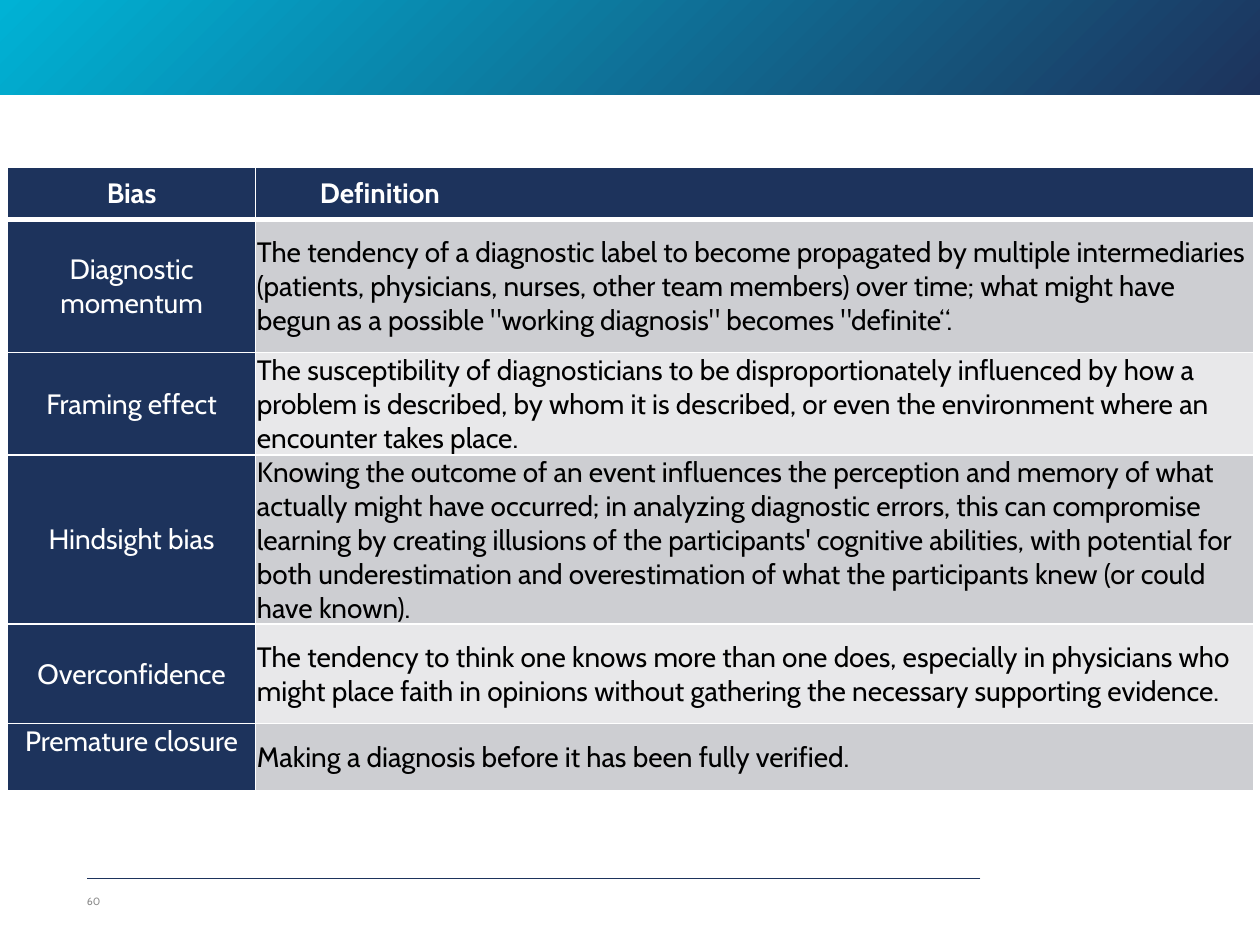
from lxml.etree import SubElement
from pptx import Presentation
from pptx.dml.color import RGBColor
from pptx.enum.shapes import MSO_CONNECTOR, MSO_SHAPE
from pptx.enum.text import MSO_ANCHOR, PP_ALIGN
from pptx.oxml import parse_xml
from pptx.oxml.ns import nsdecls, qn
from pptx.util import Inches, Pt

FONT = "Cabin"
COLORS = {
    "navy": "1D335C",
    "cyan": "00B2D5",
    "white": "FFFFFF",
    "black": "000000",
    "grey": "8C8C8C",
    "dark_band": "CDCED2",
    "light_band": "E8E8EA",
}
COLUMN_WIDTHS = [1.97, 7.92]
ROW_HEIGHTS = [0.41, 1.06, 0.79, 1.32, 0.79, 0.53]
HEADINGS = ("Bias", "Definition")
BIASES = [
    ("Diagnostic momentum",
     "The tendency of a diagnostic label to become propagated by multiple "
     "intermediaries (patients, physicians, nurses, other team members) over "
     "time; what might have begun as a possible \"working diagnosis\" becomes "
     "\"definite“."),
    ("Framing effect",
     "The susceptibility of diagnosticians to be disproportionately influenced "
     "by how a problem is described, by whom it is described, or even the "
     "environment where an encounter takes place."),
    ("Hindsight bias",
     "Knowing the outcome of an event influences the perception and memory of "
     "what actually might have occurred; in analyzing diagnostic errors, this "
     "can compromise learning by creating illusions of the participants' "
     "cognitive abilities, with potential for both underestimation and "
     "overestimation of what the participants knew (or could have known)."),
    ("Overconfidence",
     "The tendency to think one knows more than one does, especially in "
     "physicians who might place faith in opinions without gathering the "
     "necessary supporting evidence."),
    ("Premature closure",
     "Making a diagnosis before it has been fully verified."),
]


def rgb(name):
    return RGBColor.from_string(COLORS[name])


def style_font(font, size, color, bold=False):
    font.name = FONT
    font.size = Pt(size)
    font.bold = bold
    font.color.rgb = rgb(color)


def add_banner(slide):
    """Add the top band, shaded radially from its lower right corner."""
    banner = slide.shapes.add_shape(
        MSO_SHAPE.RECTANGLE, 0, 0, Inches(10), Inches(0.75))
    banner.shadow.inherit = False
    banner.line.fill.background()
    gradient = parse_xml(
        f'<a:gradFill {nsdecls("a")} rotWithShape="1"><a:gsLst>'
        f'<a:gs pos="0"><a:srgbClr val="{COLORS["navy"]}"/></a:gs>'
        f'<a:gs pos="100000"><a:srgbClr val="{COLORS["cyan"]}"/></a:gs>'
        '</a:gsLst><a:path path="circle">'
        '<a:fillToRect l="100000" t="100000"/></a:path></a:gradFill>')
    banner._element.spPr.find(qn("a:prstGeom")).addnext(gradient)


def add_footer_rule(slide):
    rule = slide.shapes.add_connector(
        MSO_CONNECTOR.STRAIGHT,
        Inches(7.78), Inches(6.97), Inches(0.69), Inches(6.97))
    rule.line.color.rgb = rgb("navy")
    rule.line.width = Pt(0.4)
    SubElement(rule._element.spPr, qn("a:effectLst"))


def add_page_number(slide, number):
    box = slide.shapes.add_textbox(
        Inches(0.69), Inches(6.95), Inches(0.38), Inches(0.4))
    frame = box.text_frame
    frame.word_wrap = True
    frame.vertical_anchor = MSO_ANCHOR.MIDDLE
    frame.margin_left = frame.margin_right = 0
    frame.margin_top = frame.margin_bottom = 0
    frame.text = number
    style_font(frame.paragraphs[0].runs[0].font, 6, "grey")


def set_borders(cell, bottom_width):
    widths = {"lnL": 1, "lnR": 1, "lnT": 1, "lnB": bottom_width}
    properties = cell._tc.get_or_add_tcPr()
    for side, width in widths.items():
        border = SubElement(properties, qn(f"a:{side}"), w=str(Pt(width)))
        fill = SubElement(border, qn("a:solidFill"))
        SubElement(fill, qn("a:srgbClr"), val=COLORS["white"])


def fill_cell(cell, text, fill, color, bold=False, bottom_width=1):
    set_borders(cell, bottom_width)
    cell.fill.solid()
    cell.fill.fore_color.rgb = rgb(fill)
    cell.margin_left = cell.margin_right = cell.margin_top = Inches(0.01)
    cell.margin_bottom = 0
    cell.vertical_anchor = MSO_ANCHOR.MIDDLE
    cell.text_frame.text = text
    paragraph = cell.text_frame.paragraphs[0]
    style_font(paragraph.runs[0].font, 16, color, bold)
    return paragraph


def add_bias_table(slide):
    table = slide.shapes.add_table(
        len(ROW_HEIGHTS), len(COLUMN_WIDTHS), Inches(0.06), Inches(1.33),
        Inches(sum(COLUMN_WIDTHS)), Inches(sum(ROW_HEIGHTS))).table
    for column, width in zip(table.columns, COLUMN_WIDTHS):
        column.width = Inches(width)
    for row, height in zip(table.rows, ROW_HEIGHTS):
        row.height = Inches(height)

    bias_heading, definition_heading = [
        fill_cell(table.cell(0, col), heading, "navy", "white",
                  bold=True, bottom_width=3)
        for col, heading in enumerate(HEADINGS)]
    bias_heading.alignment = PP_ALIGN.CENTER
    definition_heading.level = 1

    for row, (bias, definition) in enumerate(BIASES, start=1):
        label = fill_cell(table.cell(row, 0), bias, "navy", "white")
        label.alignment = PP_ALIGN.CENTER
        band = "dark_band" if row % 2 else "light_band"
        fill_cell(table.cell(row, 1), definition, band, "black")
    table.cell(len(BIASES), 0).vertical_anchor = MSO_ANCHOR.TOP


def main():
    presentation = Presentation()
    presentation.slide_width = Inches(10)
    presentation.slide_height = Inches(7.5)
    slide = presentation.slides.add_slide(presentation.slide_layouts[6])
    add_banner(slide)
    add_footer_rule(slide)
    add_page_number(slide, "60")
    add_bias_table(slide)
    presentation.save("out.pptx")


if __name__ == "__main__":
    main()
